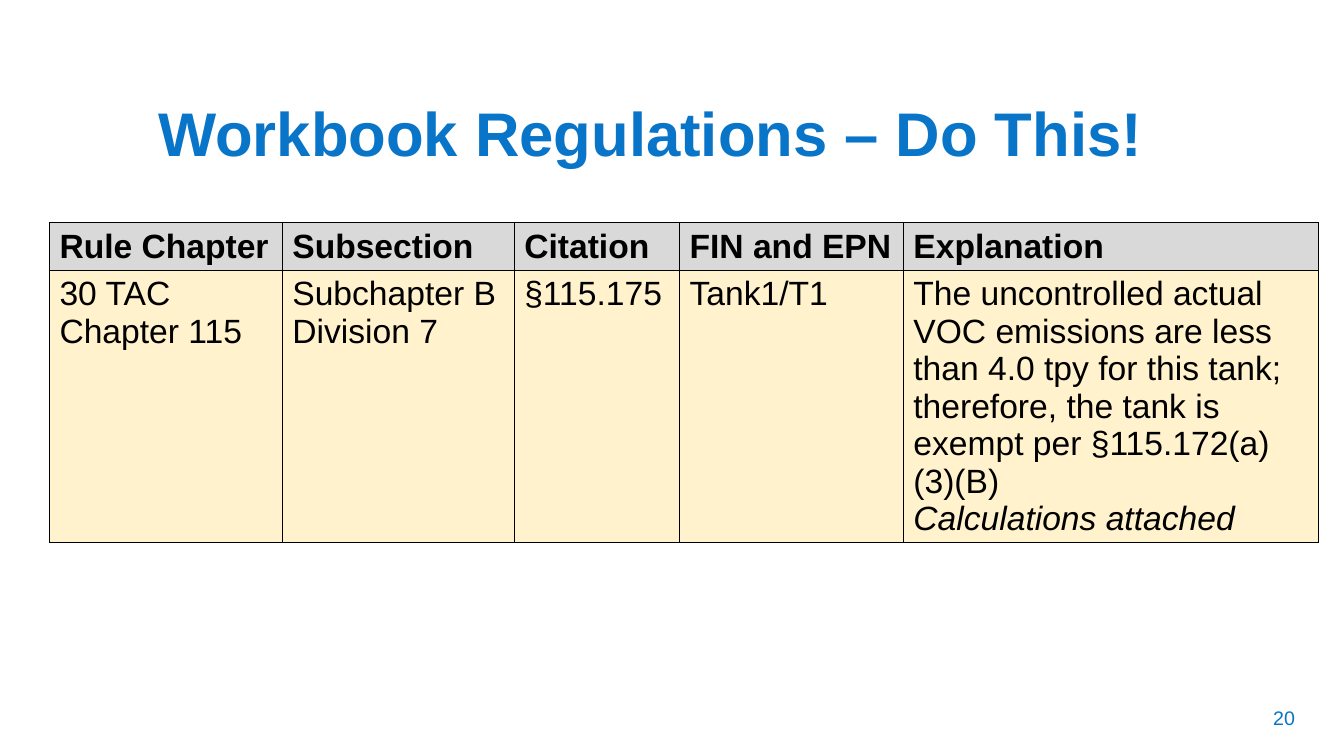
from lxml import etree
from pptx import Presentation
from pptx.dml.color import RGBColor
from pptx.enum.text import MSO_ANCHOR, PP_ALIGN
from pptx.oxml.ns import qn
from pptx.util import Inches, Pt

LEFT, CENTER = PP_ALIGN.LEFT, PP_ALIGN.CENTER
TOP = MSO_ANCHOR.TOP

TITLE = "Workbook Regulations – Do This!"
PAGE_NUMBER = "20"
HEADINGS = ["Rule Chapter", "Subsection", "Citation", "FIN and EPN", "Explanation"]
REGULATION = [
    ["30 TAC", "Chapter 115"],
    ["Subchapter B Division 7"],
    ["§115.175"],
    ["Tank1/T1"],
    ["The uncontrolled actual VOC emissions are less than 4.0 tpy for this tank; "
     "therefore, the tank is exempt per §115.172(a)(3)(B)",
     "Calculations attached"],
]
ITALIC_LINES = {"Calculations attached"}
COLUMN_WIDTHS = [2.31, 2.3, 1.64, 2.22, 4.12]
ROW_HEIGHTS = [0.47, 2.7]
COLORS = {"accent": "0875C8", "text": "000000", "border": "000000",
          "heading": "D9D9D9", "body": "FFF2CC"}


def write(frame, lines, size=24, color="text", bold=False, align=LEFT, spacing=None):
    frame.word_wrap = True
    frame.vertical_anchor = TOP
    for index, line in enumerate(lines):
        paragraph = frame.add_paragraph() if index else frame.paragraphs[0]
        paragraph.alignment = align
        paragraph.line_spacing = spacing
        run = paragraph.add_run()
        run.text = line
        run.font.name = "Arial"
        run.font.size = Pt(size)
        run.font.bold = bold
        run.font.italic = line in ITALIC_LINES
        run.font.color.rgb = RGBColor.from_string(COLORS[color])


def outline(cell):
    properties = cell._tc.get_or_add_tcPr()
    for index, side in enumerate(("lnL", "lnR", "lnT", "lnB")):
        border = etree.Element(qn(f"a:{side}"), w=str(Pt(1)))
        fill = etree.SubElement(border, qn("a:solidFill"))
        etree.SubElement(fill, qn("a:srgbClr"), val=COLORS["border"])
        properties.insert(index, border)


prs = Presentation()
prs.slide_width, prs.slide_height = Inches(13.33), Inches(7.5)
slide = prs.slides.add_slide(prs.slide_layouts[5])

title = slide.shapes.title
title.left, title.top = Inches(1.47), Inches(0.97)
title.width, title.height = Inches(10.31), Inches(1.45)
write(title.text_frame, [TITLE], size=44, color="accent", bold=True, spacing=0.9)

rows = [[[heading] for heading in HEADINGS], REGULATION]
regulations = slide.shapes.add_table(
    len(rows), len(HEADINGS), Inches(0.49), Inches(2.21),
    Inches(sum(COLUMN_WIDTHS)), Inches(sum(ROW_HEIGHTS))).table
for column, width in zip(regulations.columns, COLUMN_WIDTHS):
    column.width = Inches(width)
for row_index, (row, height) in enumerate(zip(rows, ROW_HEIGHTS)):
    regulations.rows[row_index].height = Inches(height)
    is_heading = row_index == 0
    for column_index, lines in enumerate(row):
        cell = regulations.cell(row_index, column_index)
        cell.fill.solid()
        cell.fill.fore_color.rgb = RGBColor.from_string(
            COLORS["heading" if is_heading else "body"])
        outline(cell)
        write(cell.text_frame, lines, bold=is_heading)

page_number = slide.shapes.add_textbox(Inches(12.29), Inches(6.95), Inches(0.89), Inches(0.4))
write(page_number.text_frame, [PAGE_NUMBER], size=14, color="accent", align=CENTER)

prs.save("out.pptx")
